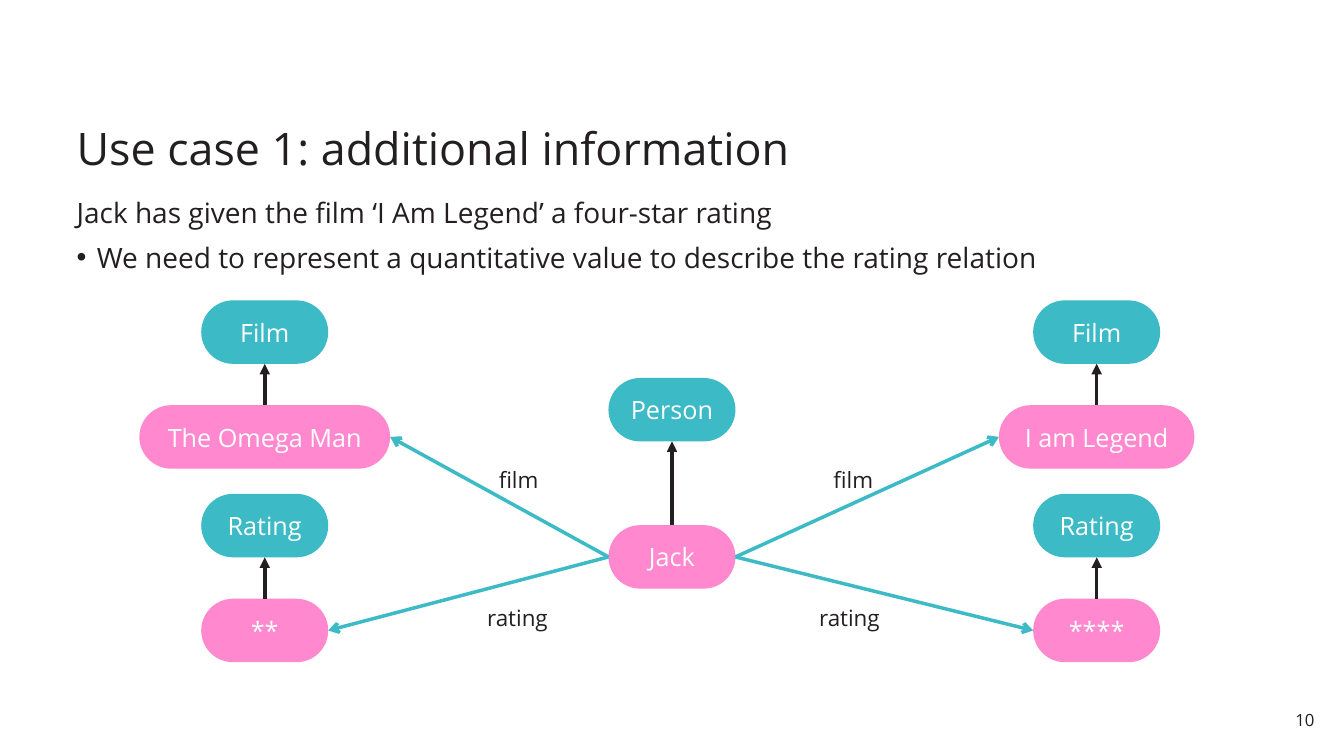
"""Build the slide on additional information about Jack's film ratings."""
from lxml import etree
from pptx import Presentation, util as u
from pptx.dml.color import RGBColor
from pptx.enum import shapes, text as t
from pptx.oxml.ns import qn

COLORS = {"ink": "231F20", "class": "3CBAC6", "instance": "FF88CF", "white": "FFFFFF"}
TOP, LEFT, BOTTOM, RIGHT = range(4)

deck = Presentation()
deck.slide_width, deck.slide_height = u.Inches(13.33), u.Inches(7.5)
column, row = deck.slide_width / 100, deck.slide_height / 100
slide = deck.slides.add_slide(deck.slide_layouts[6])
canvas = slide.shapes


def place(x, y, width, height):
    """Turn a centre and size in columns and rows into left, top, width, height."""
    return [int(n) for n in ((x - width / 2) * column, (y - height / 2) * row,
                             width * column, height * row)]


def write(text, shape, size=18, color="ink", align=t.PP_ALIGN.LEFT, wrap=False,
          anchor=t.MSO_ANCHOR.TOP, insets=(0.1, 0.05), spacing=1.0, before=0, bullet=False):
    """Add text to a shape, starting a new paragraph when it already has some."""
    frame = shape.text_frame
    frame.word_wrap, frame.vertical_anchor = wrap, anchor
    frame.margin_left = frame.margin_right = u.Inches(insets[0])
    frame.margin_top = frame.margin_bottom = u.Inches(insets[1])
    paragraph = frame.add_paragraph() if frame.text else frame.paragraphs[0]
    if bullet:
        properties = paragraph._p.get_or_add_pPr()
        properties.set("marL", str(u.Inches(0.2)))
        properties.set("indent", str(-u.Inches(0.2)))
        etree.SubElement(properties, qn("a:buFont"), typeface="Arial")
        etree.SubElement(properties, qn("a:buChar"), char="•")
    paragraph.alignment, paragraph.line_spacing = align, spacing
    paragraph.space_before = u.Pt(before)
    run = paragraph.add_run()
    run.text = text
    run.font.size, run.font.name = u.Pt(size), "Open Sans"
    run.font.color.rgb = RGBColor.from_string(COLORS[color])


title = canvas.add_textbox(*place(50, 16.93, 89.8, 13.6))
write("Use case 1: additional information", title, size=32, wrap=True,
      anchor=t.MSO_ANCHOR.BOTTOM, insets=(0.08, 0.04), spacing=0.9)

body = canvas.add_textbox(*place(50, 33.73, 89.8, 15.73))
write("Jack has given the film ‘I Am Legend’ a four-star rating", body,
      size=20, wrap=True, insets=(0.08, 0.04), spacing=0.9)
write("We need to represent a quantitative value to describe the rating relation", body,
      size=20, wrap=True, insets=(0.08, 0.04), spacing=0.9, before=10, bullet=True)

page = canvas.add_textbox(*place(96.64, 95.13, 3.53, 4.13))
write("10", page, size=12, align=t.PP_ALIGN.RIGHT, wrap=True, insets=(0.08, 0.06))

links = []
jack = None
for kind, kind_y, instance, instance_y, x, width, side in (
    ("Person", 54.2, "Jack", 73.67, 50, 9.45, None),
    ("Film", 43.93, "The Omega Man", 57.8, 19.7, 18.66, LEFT),
    ("Rating", 69.53, "**", 83.4, 19.7, 9.45, LEFT),
    ("Film", 43.93, "I am Legend", 57.8, 81.6, 14.55, RIGHT),
    ("Rating", 69.53, "****", 83.4, 81.6, 9.45, RIGHT),
):
    pair = []
    for name, y, node_width, color in ((kind, kind_y, 9.45, "class"),
                                       (instance, instance_y, width, "instance")):
        node = canvas.add_shape(shapes.MSO_SHAPE.ROUNDED_RECTANGLE,
                                *place(x, y, node_width, 8.4))
        node.adjustments[0] = 0.5
        node.shadow.inherit = False
        node.fill.solid()
        node.fill.fore_color.rgb = RGBColor.from_string(COLORS[color])
        node.line.fill.background()
        write(name, node, color="white", align=t.PP_ALIGN.CENTER,
              anchor=t.MSO_ANCHOR.MIDDLE)
        pair.append(node)
    links.append((pair[1], TOP, pair[0], BOTTOM, "ink", "triangle"))
    if side is None:
        jack = pair[1]
    else:
        links.append((jack, side, pair[1], LEFT + RIGHT - side, "class", "arrow"))

for source, source_site, target, target_site, color, head in links:
    link = canvas.add_connector(shapes.MSO_CONNECTOR.STRAIGHT, 0, 0, 0, 0)
    link.begin_connect(source, source_site)
    link.end_connect(target, target_site)
    link.line.width = u.Pt(2.5)
    link.line.color.rgb = RGBColor.from_string(COLORS[color])
    etree.SubElement(link.line._get_or_add_ln(), qn("a:tailEnd"), type=head)
    etree.SubElement(link._element.spPr, qn("a:effectLst"))

for relation, y, width, centres in (("film", 63.4, 4.65, (38.7, 63.6)),
                                    ("rating", 81.67, 6.38, (38.7, 63.4))):
    for x in centres:
        write(relation, canvas.add_textbox(*place(x, y, width, 4.93)), size=16)

deck.save("out.pptx")
